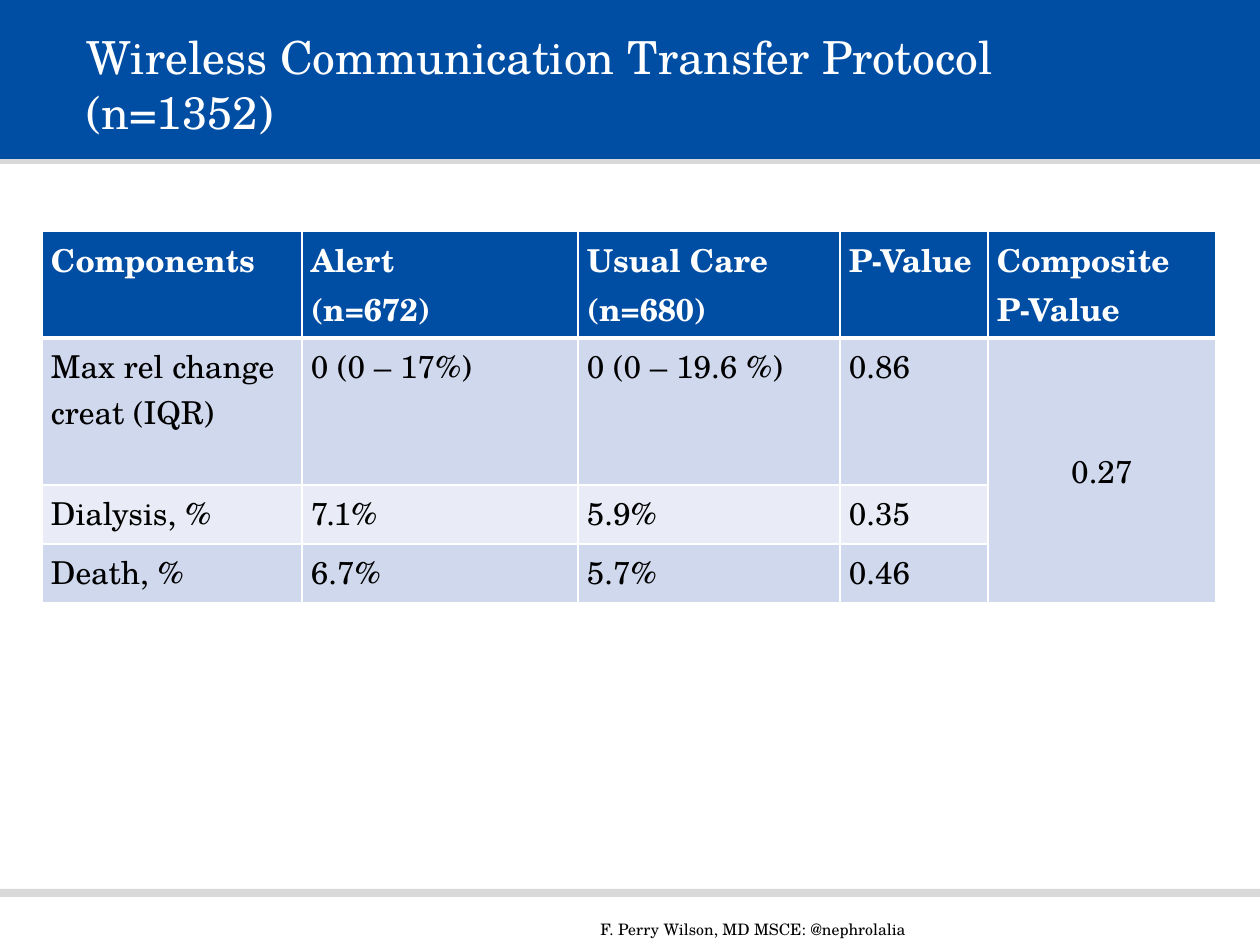
from dataclasses import dataclass
from typing import Optional

from lxml.etree import SubElement
from pptx import Presentation
from pptx.dml.color import RGBColor as RGB
from pptx.enum.shapes import MSO_SHAPE as SHAPE
from pptx.enum.text import MSO_ANCHOR as ANCHOR, PP_ALIGN as ALIGN
from pptx.oxml.ns import qn
from pptx.util import Emu, Pt

PX_PER_INCH = 126


@dataclass(frozen=True)
class Theme:
    font: str = "TeX Gyre Schola"
    blue: str = "004DA4"
    grey: str = "DAD9D9"
    band_dark: str = "CFD8EC"
    band_light: str = "E9ECF6"
    white: str = "FFFFFF"
    black: str = "000000"
    title_size: int = 26
    table_size: int = 18
    footer_size: int = 9
    rule: int = 1
    header_rule: int = 3


THEME = Theme()


@dataclass(frozen=True)
class Box:
    left: int
    top: int
    width: int
    height: int

    def emu(self) -> tuple:
        return tuple(map(px, (self.left, self.top, self.width, self.height)))


@dataclass(frozen=True)
class Bar:
    box: Box
    color: str


@dataclass(frozen=True)
class Label:
    box: Box
    text: str
    size: int
    color: str
    anchor: ANCHOR = ANCHOR.TOP


@dataclass(frozen=True)
class CellLook:
    fill: str
    color: str
    bold: bool = False
    top: int = THEME.rule
    bottom: int = THEME.rule
    anchor: ANCHOR = ANCHOR.TOP
    align: ALIGN = ALIGN.LEFT


BARS = [
    Bar(Box(0, 132, 1260, 32), THEME.grey),
    Bar(Box(0, 0, 1260, 159), THEME.blue),
    Bar(Box(0, 889, 1260, 8), THEME.grey),
]
LABELS = [
    Label(Box(588, 914, 368, 31), "F. Perry Wilson, MD MSCE: @nephrolalia",
          THEME.footer_size, THEME.black),
    Label(Box(74, 21, 1121, 126),
          "Wireless Communication Transfer Protocol (n=1352)",
          THEME.title_size, THEME.white, ANCHOR.MIDDLE),
]

COL_WIDTHS = [260, 276, 262, 148, 228]
ROW_HEIGHTS = [107, 147, 59, 59]
TABLE_BOX = Box(42, 231, sum(COL_WIDTHS), sum(ROW_HEIGHTS))
ROWS = [
    ["Components", "Alert\n(n=672)", "Usual Care\n(n=680)", "P-Value",
     "Composite P-Value"],
    ["Max rel change creat (IQR)", "0 (0 – 17%)", "0 (0 – 19.6 %)", "0.86",
     "0.27"],
    ["Dialysis, %", "7.1%", "5.9%", "0.35", None],
    ["Death, %", "6.7%", "5.7%", "0.46", None],
]


def px(n: int) -> Emu:
    return Emu(round(n * 914400 / PX_PER_INCH))


def apply(target, values: dict) -> None:
    for name, value in values.items():
        setattr(target, name, value)


def write(tf, text: str, size: int, color: str, bold: bool = False,
          align: ALIGN = ALIGN.LEFT) -> None:
    """Fill a text frame, one paragraph for each line of text."""
    tf.text = text
    for p in tf.paragraphs:
        p.alignment = align
        for r in p.runs:
            apply(r.font, {"name": THEME.font, "size": Pt(size), "bold": bold})
            r.font.color.rgb = RGB.from_string(color)


def draw_bar(slide, bar: Bar) -> None:
    sp = slide.shapes.add_shape(SHAPE.RECTANGLE, *bar.box.emu())
    sp.shadow.inherit = False
    sp.fill.solid()
    sp.fill.fore_color.rgb = RGB.from_string(bar.color)
    sp.line.fill.background()


def draw_label(slide, label: Label) -> None:
    tf = slide.shapes.add_textbox(*label.box.emu()).text_frame
    apply(tf, {"word_wrap": True, "vertical_anchor": label.anchor})
    write(tf, label.text, label.size, label.color)


def add_border(cell, tag: str, width: int) -> None:
    ln = SubElement(cell._tc.get_or_add_tcPr(), qn(tag), w=str(Pt(width)))
    fill = SubElement(ln, qn("a:solidFill"))
    SubElement(fill, qn("a:srgbClr"), val=THEME.white)


def cell_look(row: int, merged: bool) -> CellLook:
    if row == 0:
        return CellLook(THEME.blue, THEME.white, bold=True,
                        bottom=THEME.header_rule)
    fill = THEME.band_dark if row % 2 else THEME.band_light
    top = THEME.header_rule if row == 1 else THEME.rule
    if merged:
        return CellLook(fill, THEME.black, top=top, anchor=ANCHOR.MIDDLE,
                        align=ALIGN.CENTER)
    return CellLook(fill, THEME.black, top=top)


def draw_cell(cell, text: Optional[str], look: CellLook) -> None:
    apply(cell, {"margin_left": px(9), "margin_right": px(9),
                 "margin_top": px(5), "margin_bottom": px(5),
                 "vertical_anchor": look.anchor})
    # The schema wants borders ahead of the fill.
    for tag, width in (("a:lnL", THEME.rule), ("a:lnR", THEME.rule),
                       ("a:lnT", look.top), ("a:lnB", look.bottom)):
        add_border(cell, tag, width)
    cell.fill.solid()
    cell.fill.fore_color.rgb = RGB.from_string(look.fill)
    write(cell.text_frame, text, THEME.table_size, look.color, look.bold,
          look.align)


def draw_table(slide) -> None:
    table = slide.shapes.add_table(len(ROWS), len(COL_WIDTHS),
                                   *TABLE_BOX.emu()).table
    apply(table, {"first_row": True, "horz_banding": False})
    for column, width in zip(table.columns, COL_WIDTHS):
        column.width = px(width)
    for row, height in zip(table.rows, ROW_HEIGHTS):
        row.height = px(height)
    last_col = len(COL_WIDTHS) - 1
    table.cell(1, last_col).merge(table.cell(len(ROWS) - 1, last_col))
    for i, texts in enumerate(ROWS):
        for j, text in enumerate(texts):
            cell = table.cell(i, j)
            if not cell.is_spanned:
                draw_cell(cell, text, cell_look(i, cell.is_merge_origin))


def main() -> None:
    prs = Presentation()
    apply(prs, {"slide_width": px(1260), "slide_height": px(945)})
    slide = prs.slides.add_slide(prs.slide_layouts[6])
    for bar in BARS:
        draw_bar(slide, bar)
    for label in LABELS:
        draw_label(slide, label)
    draw_table(slide)
    prs.save("out.pptx")


if __name__ == "__main__":
    main()
